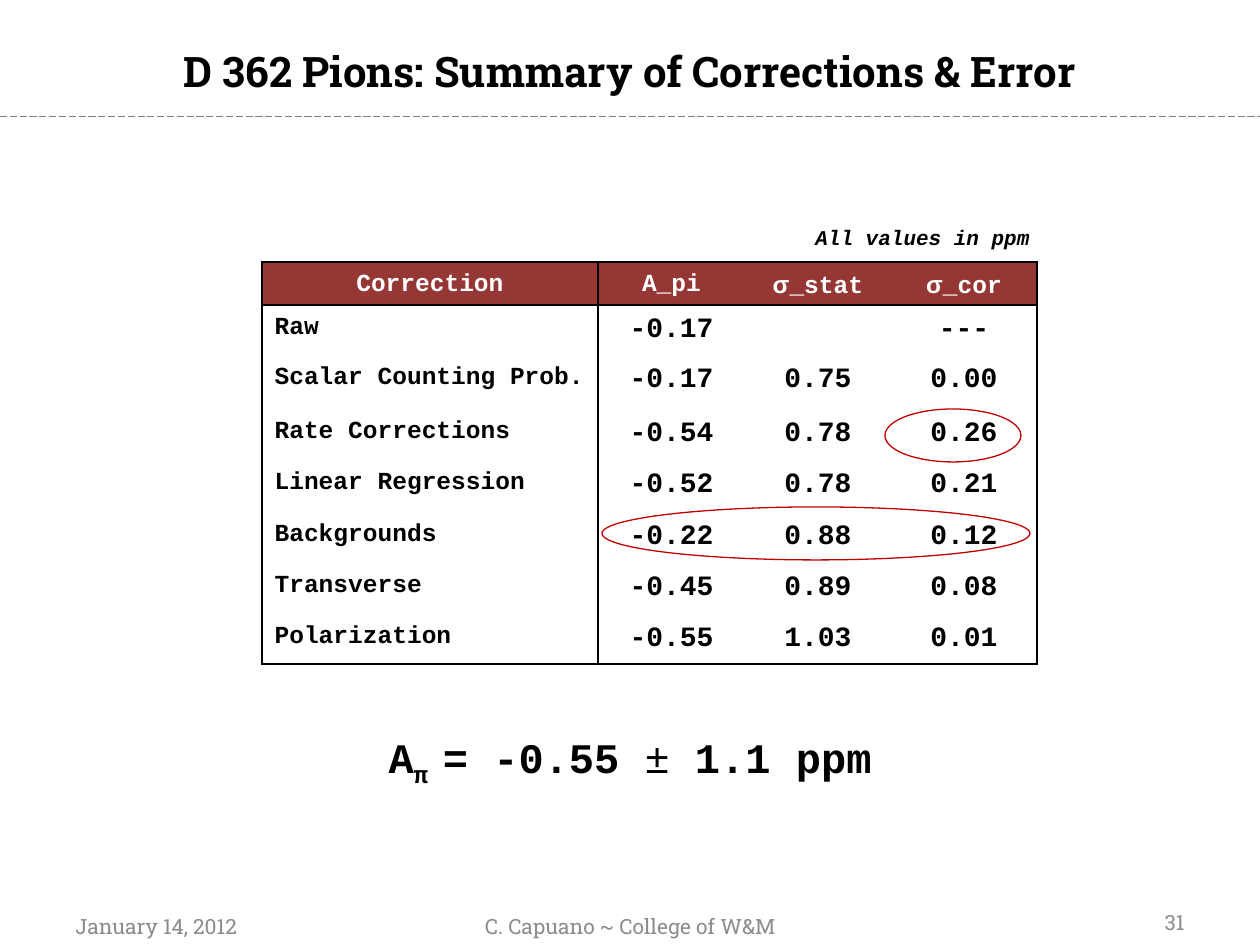
from dataclasses import dataclass
from typing import Optional

import pptx
import pptx.dml.color
import pptx.enum.dml
import pptx.enum.shapes
import pptx.enum.text
import pptx.oxml.ns
import pptx.util
from lxml import etree

RGBColor = pptx.dml.color.RGBColor
ALIGN = pptx.enum.text.PP_ALIGN
ANCHOR = pptx.enum.text.MSO_ANCHOR
qn = pptx.oxml.ns.qn

BLACK = RGBColor(0x00, 0x00, 0x00)
WHITE = RGBColor(0xFF, 0xFF, 0xFF)
GREY = RGBColor(0x8C, 0x8C, 0x8C)
RULE_GREY = RGBColor(0x80, 0x80, 0x80)
HEADER_RED = RGBColor(0x95, 0x37, 0x35)
MARK_RED = RGBColor(0xC0, 0x00, 0x00)
SERIF, MONO, SANS = "Roboto Slab", "Courier New", "Arial"
PX_PER_INCH = 126


@dataclass(frozen=True)
class Box:
    left: int
    top: int
    width: int
    height: int


@dataclass(frozen=True)
class Span:
    text: str
    bold: Optional[bool] = None
    font: Optional[str] = None
    baseline: int = 0


@dataclass(frozen=True)
class Label:
    box: Box
    spans: list
    format: dict
    anchor: int = ANCHOR.TOP
    space_before: int = 0


def px(count: int) -> pptx.util.Emu:
    return pptx.util.Emu(round(count * 914400 / PX_PER_INCH))


def place(box: Box) -> tuple:
    return px(box.left), px(box.top), px(box.width), px(box.height)


def write(para, spans, *, size, font=MONO, color=BLACK, bold=True,
          italic=False, align=ALIGN.LEFT) -> None:
    para.alignment = align
    for part in spans:
        span = para.add_run()
        span.text = part.text
        span.font.name = part.font or font
        span.font.size = pptx.util.Pt(size)
        span.font.bold = bold if part.bold is None else part.bold
        span.font.italic = italic
        span.font.color.rgb = color
        if part.baseline:
            span.font._element.set("baseline", str(part.baseline * 1000))


def add_label(page, label: Label) -> None:
    frame = page.shapes.add_textbox(*place(label.box)).text_frame
    frame.word_wrap = True
    frame.vertical_anchor = label.anchor
    para = frame.paragraphs[0]
    write(para, label.spans, **label.format)
    if label.space_before:
        before = etree.SubElement(para._p.get_or_add_pPr(), qn("a:spcBef"))
        etree.SubElement(before, qn("a:spcPct"), val=str(label.space_before * 1000))


def add_rule(page, top: int) -> None:
    rule = page.shapes.add_connector(
        pptx.enum.shapes.MSO_CONNECTOR.STRAIGHT, px(0), px(top), px(1260), px(top))
    rule.line.color.rgb = RULE_GREY
    rule.line.width = pptx.util.Pt(0.5)
    rule.line.dash_style = pptx.enum.dml.MSO_LINE.LONG_DASH
    etree.SubElement(rule._element.spPr, qn("a:effectLst"))


def add_ring(page, box: Box) -> None:
    ring = page.shapes.add_shape(pptx.enum.shapes.MSO_SHAPE.OVAL, *place(box))
    ring.shadow.inherit = False
    ring.fill.background()
    ring.line.color.rgb = MARK_RED
    ring.line.width = pptx.util.Pt(0.75)


def set_borders(cell, widths: dict) -> None:
    properties = cell._tc.get_or_add_tcPr()
    for side in "LRTB":
        width = widths.get(side, 0)
        line = etree.SubElement(properties, qn(f"a:ln{side}"), w=str(pptx.util.Pt(width)))
        if width:
            fill = etree.SubElement(line, qn("a:solidFill"))
            etree.SubElement(fill, qn("a:srgbClr"), val=str(BLACK))
        else:
            etree.SubElement(line, qn("a:noFill"))


def border_widths(row: int, column: int, last_row: int, last_column: int) -> dict:
    widths = {}
    if column == 0:
        widths.update(L=1.5 if row else 1, R=1.5)
    elif column == 1:
        widths["L"] = 1.5
    elif column == last_column:
        widths["R"] = 1
    if row == 0:
        widths.update(T=1.5 if column else 1, B=1.5)
    elif row == 1:
        widths["T"] = 1.5
    elif row == last_row:
        widths["B"] = 1.5
    return widths


def add_corrections(page, box: Box, columns: list, heights: list, rows: list) -> None:
    table = page.shapes.add_table(len(rows), len(columns), *place(box)).table
    table.first_row = table.horz_banding = False
    for column, width in zip(table.columns, columns):
        column.width = px(width)
    for row, height in zip(table.rows, heights):
        row.height = px(height)
    for r, values in enumerate(rows):
        for c, value in enumerate(values):
            cell = table.cell(r, c)
            cell.margin_top, cell.margin_bottom = px(9), px(6)
            set_borders(cell, border_widths(r, c, len(rows) - 1, len(columns) - 1))
            if r == 0:
                cell.fill.solid()
                cell.fill.fore_color.rgb = HEADER_RED
            else:
                cell.fill.background()
            spans = value if isinstance(value, list) else [Span(value)]
            para = cell.text_frame.paragraphs[0]
            para.line_spacing = 0.93
            write(para, spans, size=16 if r and c else 14,
                  color=BLACK if r else WHITE,
                  align=ALIGN.LEFT if r and c == 0 else ALIGN.CENTER)


SIGMA = Span("σ", font=SANS)
ROWS = [
    ["Correction", "A_pi", [SIGMA, Span("_stat")], [SIGMA, Span("_cor")]],
    ["Raw", "-0.17", "", "---"],
    ["Scalar Counting Prob.", "-0.17", "0.75", "0.00"],
    ["Rate Corrections", "-0.54", "0.78", "0.26"],
    ["Linear Regression", "-0.52", "0.78", "0.21"],
    ["Backgrounds", "-0.22", "0.88", "0.12"],
    ["Transverse", "-0.45", "0.89", "0.08"],
    ["Polarization", "-0.55", "1.03", "0.01"],
]
COLUMNS = [336, 147, 146, 146]
HEIGHTS = [43, 50, 54, 51, 52, 51, 51, 50]
FOOTER = dict(size=12, font=SERIF, color=GREY, bold=False)
RESULT = [Span("A"), Span("π ", baseline=-25), Span("= -0.55 "),
          Span("±", bold=False), Span(" 1.1 ppm")]

LABELS = [
    Label(Box(63, 32, 1134, 78), [Span("D 362 Pions: Summary of Corrections & Error")],
          dict(size=24, font=SERIF, align=ALIGN.CENTER), ANCHOR.MIDDLE),
    Label(Box(591, 218, 451, 38), [Span("All values in ppm")],
          dict(size=12, italic=True, align=ALIGN.RIGHT), space_before=50),
    Label(Box(0, 725, 1260, 63), RESULT,
          dict(size=24, align=ALIGN.CENTER), space_before=50),
    Label(Box(63, 895, 294, 50), [Span("January 14, 2012")], FOOTER, ANCHOR.BOTTOM),
    Label(Box(431, 895, 399, 50), [Span("C. Capuano ~ College of W&M")],
          dict(FOOTER, align=ALIGN.CENTER), ANCHOR.BOTTOM),
    Label(Box(903, 891, 294, 50), [Span("31")],
          dict(FOOTER, align=ALIGN.RIGHT), ANCHOR.BOTTOM),
]
RINGS = [Box(885, 409, 136, 53), Box(602, 507, 428, 53)]


def main() -> None:
    deck = pptx.Presentation()
    deck.slide_width, deck.slide_height = px(1260), px(945)
    page = deck.slides.add_slide(deck.slide_layouts[6])

    # Rule under the title
    add_rule(page, 116)

    # Table of corrections
    add_corrections(page, Box(262, 262, sum(COLUMNS), sum(HEIGHTS)), COLUMNS, HEIGHTS, ROWS)

    # Title, unit note, result and footer
    for label in LABELS:
        add_label(page, label)

    # Rings around the notable values
    for box in RINGS:
        add_ring(page, box)

    deck.save("out.pptx")


if __name__ == "__main__":
    main()
